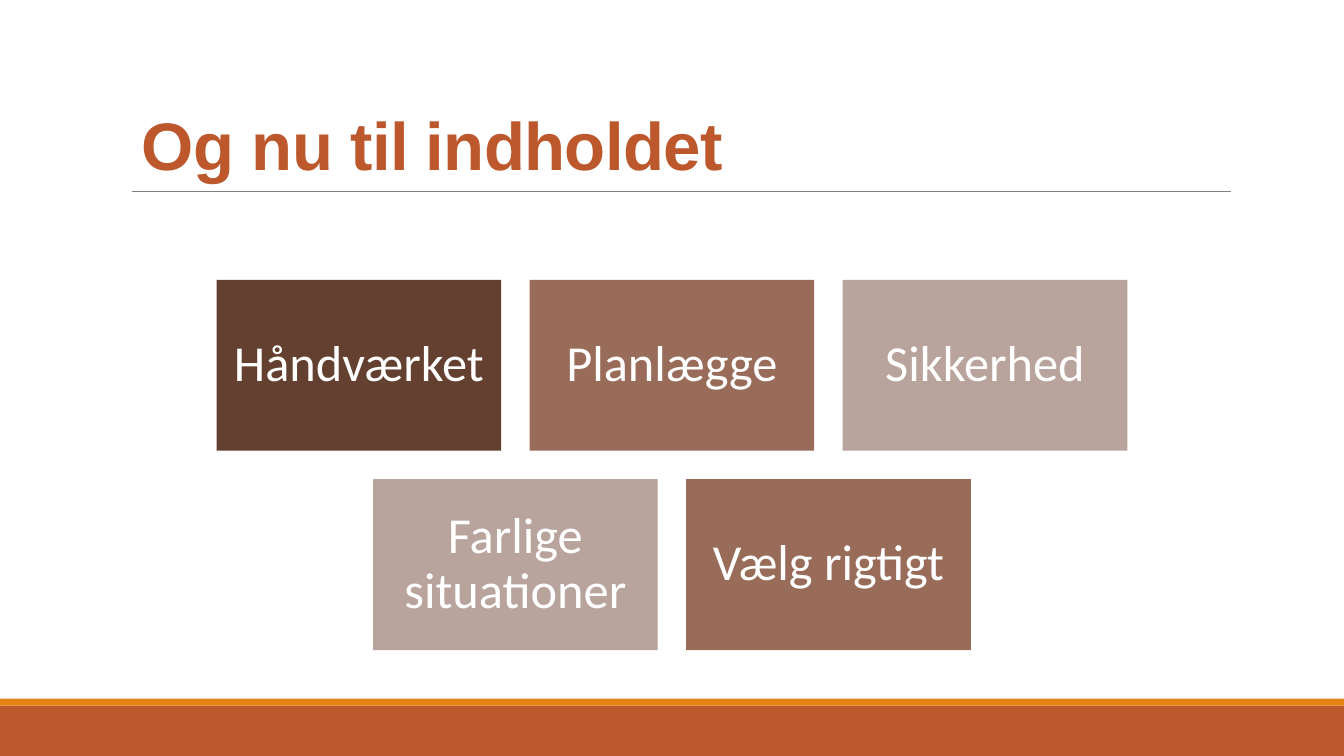
from typing import NamedTuple

import pptx
import pptx.dml.color
import pptx.enum.shapes
import pptx.enum.text
import pptx.oxml
import pptx.oxml.ns
import pptx.shapes.autoshape
import pptx.slide
import pptx.text.text
import pptx.util

Pt = pptx.util.Pt
PP_ALIGN = pptx.enum.text.PP_ALIGN
MSO_ANCHOR = pptx.enum.text.MSO_ANCHOR

COLORS = {
    "rust": "BD582C",
    "orange": "E48312",
    "rule": "808080",
    "dark": "63402F",
    "medium": "996C5A",
    "light": "B8A49D",
    "white": "FFFFFF",
}
SLIDE_W, SLIDE_H = 960, 540
TOPIC_W, TOPIC_H, TOPIC_GAP = 203.3, 122, 20.33
TOPICS_TOP = 200
TOPIC_INSET = 10.8


class Bar(NamedTuple):
    top: float
    height: float
    color: str


class Topic(NamedTuple):
    label: str
    color: str


FOOTER_BARS = [Bar(504, 36, "rust"), Bar(499, 5, "orange")]
TOPIC_ROWS = [
    [Topic("Håndværket", "dark"), Topic("Planlægge", "medium"), Topic("Sikkerhed", "light")],
    [Topic("Farlige situationer", "light"), Topic("Vælg rigtigt", "medium")],
]


def rgb(name: str) -> pptx.dml.color.RGBColor:
    return pptx.dml.color.RGBColor.from_string(COLORS[name])


def add_rect(s: pptx.slide.Slide, left: float, top: float, width: float, height: float,
             color: str) -> pptx.shapes.autoshape.Shape:
    sp = s.shapes.add_shape(pptx.enum.shapes.MSO_SHAPE.RECTANGLE,
                            Pt(left), Pt(top), Pt(width), Pt(height))
    sp.shadow.inherit = False
    sp.fill.solid()
    sp.fill.fore_color.rgb = rgb(color)
    sp.line.fill.background()
    return sp


def add_run(p: pptx.text.text._Paragraph, text: str, font: str, size: float,
            color: str, bold: bool = False) -> pptx.text.text._Run:
    r = p.add_run()
    r.text = text
    r.font.name = font
    r.font.size = Pt(size)
    r.font.bold = bold
    r.font.color.rgb = rgb(color)
    return r


def add_title(s: pptx.slide.Slide, text: str) -> None:
    """Add the title and the thin rule below it."""
    sp = s.shapes.add_textbox(Pt(94.3), Pt(69.8), Pt(792.7), Pt(65.5))
    tf = sp.text_frame
    tf.word_wrap = True
    tf.vertical_anchor = MSO_ANCHOR.BOTTOM
    p = tf.paragraphs[0]
    p.line_spacing = 0.85
    r = add_run(p, text, "Arial", 48, "rust", bold=True)
    r.font._element.set("spc", "-50")

    rule = s.shapes.add_connector(pptx.enum.shapes.MSO_CONNECTOR.STRAIGHT,
                                  Pt(94.3), Pt(136.8), Pt(879), Pt(136.8))
    rule.line.color.rgb = rgb("rule")
    rule.line.width = Pt(0.5)
    rule._element.spPr.append(pptx.oxml.parse_xml(
        f"<a:effectLst {pptx.oxml.ns.nsdecls('a')}/>"))


def add_topic(s: pptx.slide.Slide, topic: Topic, left: float, top: float) -> None:
    sp = add_rect(s, left, top, TOPIC_W, TOPIC_H, topic.color)
    tf = sp.text_frame
    tf.word_wrap = True
    tf.vertical_anchor = MSO_ANCHOR.MIDDLE
    tf.margin_left = tf.margin_right = tf.margin_top = tf.margin_bottom = Pt(TOPIC_INSET)
    p = tf.paragraphs[0]
    p.alignment = PP_ALIGN.CENTER
    p.line_spacing = 0.9
    add_run(p, topic.label, "Calibri", 36, "white")


def add_topic_rows(s: pptx.slide.Slide, rows: list[list[Topic]]) -> None:
    """Lay out the topic boxes with every row centred on the slide."""
    for row_no, row in enumerate(rows):
        row_w = len(row) * (TOPIC_W + TOPIC_GAP) - TOPIC_GAP
        left = (SLIDE_W - row_w) / 2
        top = TOPICS_TOP + row_no * (TOPIC_H + TOPIC_GAP)
        for col_no, topic in enumerate(row):
            add_topic(s, topic, left + col_no * (TOPIC_W + TOPIC_GAP), top)


def main() -> None:
    prs = pptx.Presentation()
    prs.slide_width, prs.slide_height = Pt(SLIDE_W), Pt(SLIDE_H)
    s = prs.slides.add_slide(prs.slide_layouts[6])
    for bar in FOOTER_BARS:
        add_rect(s, 0, bar.top, SLIDE_W, bar.height, bar.color)
    add_title(s, "Og nu til indholdet")
    add_topic_rows(s, TOPIC_ROWS)
    prs.save("out.pptx")


if __name__ == "__main__":
    main()
